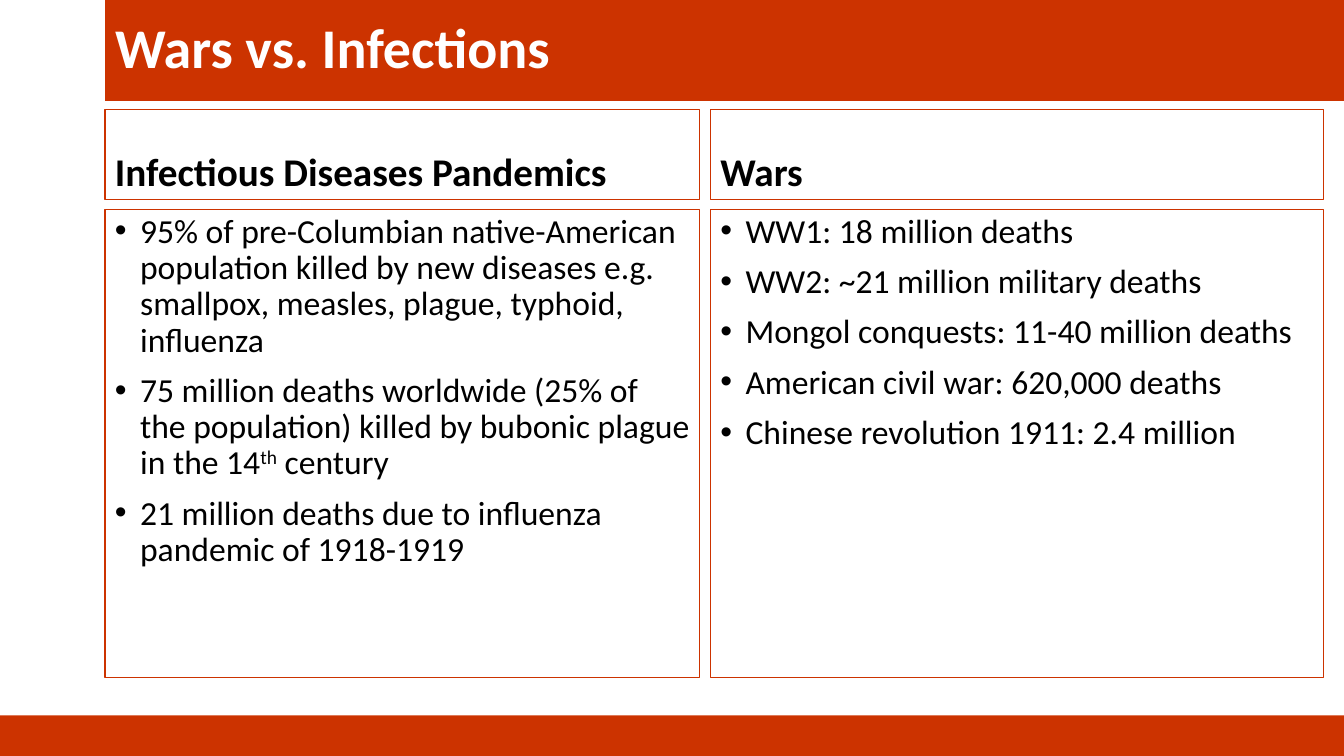
from lxml.etree import SubElement
from pptx import Presentation
from pptx.dml.color import RGBColor
from pptx.enum.shapes import MSO_SHAPE as Shape
from pptx.enum.text import MSO_ANCHOR as Anchor, MSO_AUTO_SIZE as AutoSize, PP_ALIGN as Align
from pptx.oxml.ns import qn
from pptx.util import Pt

RED, BLACK, WHITE = "CC3300", "000000", "FFFFFF"
FONT = "Calibri"
WIDTH, HEIGHT = 960, 540
LEFT = 75
INDENT = 18
HEADING_TOP, HEADING_HEIGHT = 78, 64.5
BODY_TOP, BODY_HEIGHT = 149.5, 334.5

# Each column: left, width, heading, bullets; each bullet is a list of (text, superscript)
COLUMNS = [
    (LEFT, 425, "Infectious Diseases Pandemics", [
        [("95% of pre-Columbian native-American population killed by new diseases "
          "e.g. smallpox, measles, plague, typhoid, influenza", False)],
        [("75 million deaths worldwide (25% of the population) killed by bubonic "
          "plague in the 14", False), ("th", True), (" century", False)],
        [("21 million deaths due to influenza pandemic of 1918-1919", False)],
    ]),
    (507.5, 438, "Wars", [
        [("WW1: 18 million deaths", False)],
        [("WW2: ~21 million military deaths", False)],
        [("Mongol conquests: 11-40 million deaths", False)],
        [("American civil war: 620,000 deaths", False)],
        [("Chinese revolution 1911: 2.4 million", False)],
    ]),
]


def color(hex_string):
    return RGBColor.from_string(hex_string)


def fill_solid(shape, hex_string):
    shape.fill.solid()
    shape.fill.fore_color.rgb = color(hex_string)


def place(shape, left, top, width, height):
    shape.left, shape.top = Pt(left), Pt(top)
    shape.width, shape.height = Pt(width), Pt(height)


def set_frame(frame, anchor):
    frame.word_wrap = True
    frame.auto_size = AutoSize.NONE
    frame.vertical_anchor = anchor


def add_run(paragraph, text, size, hex_string, bold=False, superscript=False):
    run = paragraph.add_run()
    run.text = text
    run.font.name = FONT
    run.font.size = Pt(size)
    run.font.bold = bold
    run.font.color.rgb = color(hex_string)
    if superscript:
        run.font._element.set("baseline", "30000")


def add_bullet(paragraph):
    properties = paragraph._p.get_or_add_pPr()
    properties.set("marL", str(Pt(INDENT)))
    properties.set("indent", str(Pt(-INDENT)))
    SubElement(properties, qn("a:buFont")).set("typeface", "Arial")
    SubElement(properties, qn("a:buChar")).set("char", "•")


def add_outlined_box(slide, left, top, width, height, anchor):
    """Add an empty red-outlined text box and return its text frame."""
    box = slide.shapes.add_textbox(Pt(left), Pt(top), Pt(width), Pt(height))
    box.line.color.rgb = color(RED)
    box.line.width = Pt(0.75)
    set_frame(box.text_frame, anchor)
    return box.text_frame


def add_heading(slide, left, width, text):
    frame = add_outlined_box(slide, left, HEADING_TOP, width, HEADING_HEIGHT, Anchor.BOTTOM)
    paragraph = frame.paragraphs[0]
    paragraph.line_spacing = 0.9
    add_run(paragraph, text, 28, BLACK, bold=True)


def add_bullet_list(slide, left, width, bullets):
    frame = add_outlined_box(slide, left, BODY_TOP, width, BODY_HEIGHT, Anchor.TOP)
    for index, runs in enumerate(bullets):
        paragraph = frame.add_paragraph() if index else frame.paragraphs[0]
        add_bullet(paragraph)
        paragraph.line_spacing = 0.9
        paragraph.space_before = Pt(10 if index else 0)
        for text, superscript in runs:
            add_run(paragraph, text, 24, BLACK, superscript=superscript)


def add_footer_bar(slide):
    top = 511
    bar = slide.shapes.add_shape(Shape.RECTANGLE, 0, Pt(top), Pt(WIDTH), Pt(HEIGHT - top))
    bar.shadow.inherit = False
    fill_solid(bar, RED)
    bar.line.fill.background()


def format_title(slide, text):
    title = slide.shapes.title
    place(title, LEFT, 0, WIDTH - LEFT, 72)
    fill_solid(title, RED)
    set_frame(title.text_frame, Anchor.MIDDLE)
    paragraph = title.text_frame.paragraphs[0]
    paragraph.alignment = Align.LEFT
    paragraph.line_spacing = 0.9
    add_run(paragraph, text, 40, WHITE, bold=True)


def main():
    presentation = Presentation()
    presentation.slide_width, presentation.slide_height = Pt(WIDTH), Pt(HEIGHT)
    slide = presentation.slides.add_slide(presentation.slide_layouts[5])
    format_title(slide, "Wars vs. Infections")
    add_footer_bar(slide)
    for left, width, heading, bullets in COLUMNS:
        add_heading(slide, left, width, heading)
        add_bullet_list(slide, left, width, bullets)
    presentation.save("out.pptx")


if __name__ == "__main__":
    main()
